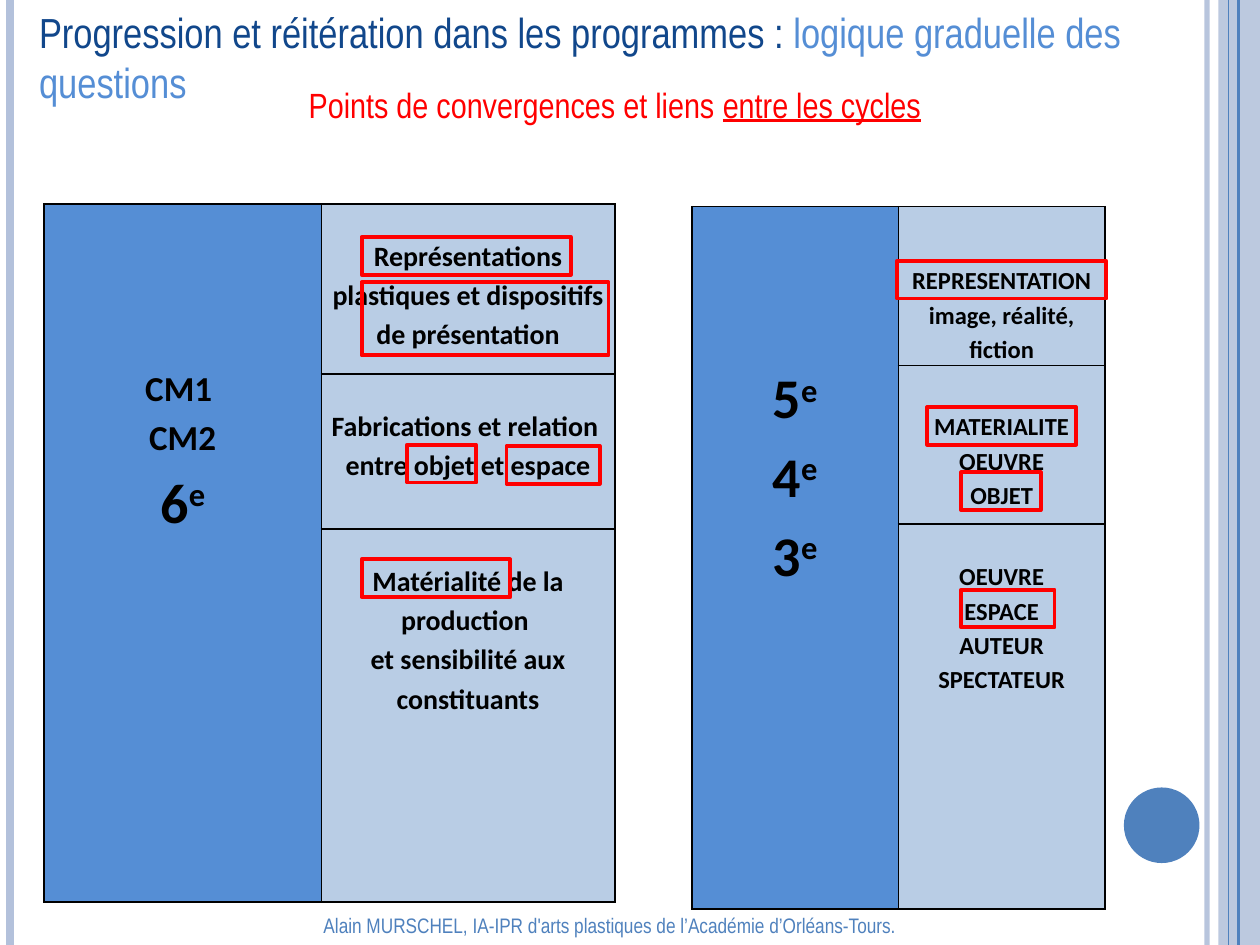
from lxml.etree import SubElement
from pptx import Presentation
from pptx.dml.color import RGBColor
from pptx.enum.shapes import MSO_CONNECTOR, MSO_SHAPE
from pptx.enum.text import MSO_ANCHOR, MSO_AUTO_SIZE, PP_ALIGN
from pptx.oxml.ns import qn
from pptx.util import Inches, Pt

HUES = {
    "navy": "11478B", "sky": "558ED5", "pale": "B9CDE5", "band": "B3C1DB",
    "blue": "4F81BD", "red": "FF0000", "black": "000000",
}
RAILS = [(9.58, "band", 3), (0.08, "band", 4.5), (9.83, "blue", 1.5), (9.75, "blue", 0.75)]
FRAMES = [
    (2.87, 1.88, 1.66, 0.3), (2.87, 2.24, 1.96, 0.58), (3.23, 3.53, 0.55, 0.3),
    (4.02, 3.54, 0.74, 0.3), (2.87, 4.44, 1.18, 0.3), (7.12, 2.07, 1.66, 0.3),
    (7.36, 3.23, 1.18, 0.3), (7.63, 3.75, 0.63, 0.3), (7.63, 4.68, 0.74, 0.3),
]
EARLY = {
    "box": (0.35, 1.62), "cols": (2.2, 2.33), "rows": (1.35, 1.23, 2.96), "size": 16,
    "years": (1.25, [("CM1 ", 20), ("CM2", 20), ("6e", 32)]),
    "themes": [
        (0.24, ["Représentations plastiques et dispositifs de présentation"]),
        (0.24, ["Fabrications et relation ", "entre objet et espace"]),
        (0.24, ["Matérialité de la production ", "et sensibilité aux constituants"]),
    ],
}
LATE = {
    "box": (5.49, 1.64), "cols": (1.64, 1.64), "rows": (1.26, 1.26, 2.93), "size": 14,
    "years": (1.18, [("5e", 32), ("4e", 32), ("3e", 32)]),
    "themes": [
        (0.44, ["REPRESENTATION", "image, réalité, fiction"]),
        (0.34, ["MATERIALITE", "OEUVRE", "OBJET"]),
        (0.27, ["OEUVRE", "ESPACE", "AUTEUR", "SPECTATEUR"]),
    ],
}


def tint(name):
    """Return the named colour."""
    return RGBColor.from_string(HUES[name])


def fade(fill, part):
    """Give a solid fill an opacity in percent."""
    hue = fill._xPr.find(".//" + qn("a:srgbClr"))
    SubElement(hue, qn("a:alpha"), val=str(part * 1000))


def add_rail(slide, left, hue, width):
    """Draw a full-height vertical line."""
    x = Inches(left)
    rail = slide.shapes.add_connector(MSO_CONNECTOR.STRAIGHT, x, 0, x, Inches(7.5))
    rail.line.color.rgb = tint(hue)
    rail.line.width = Pt(width)
    SubElement(rail._element.spPr, qn("a:effectLst"))
    return rail


def add_form(slide, kind, box, fill=None, line=None):
    """Draw a preset shape with a plain fill or a plain outline."""
    form = slide.shapes.add_shape(kind, *map(Inches, box))
    form.shadow.inherit = False
    if fill:
        form.fill.solid()
        form.fill.fore_color.rgb = tint(fill)
    else:
        form.fill.background()
    if line:
        form.line.color.rgb = tint(line)
        form.line.width = Pt(2.25)
    else:
        form.line.fill.background()
    return form


def set_text(shape, box, runs, size, align, anchor=MSO_ANCHOR.TOP):
    """Place a text shape and write one paragraph of coloured runs."""
    shape.left, shape.top, shape.width, shape.height = map(Inches, box)
    frame = shape.text_frame
    frame.word_wrap = True
    frame.auto_size = MSO_AUTO_SIZE.NONE
    frame.vertical_anchor = anchor
    para = frame.paragraphs[0]
    para.alignment = align
    for text, hue in runs:
        run = para.add_run()
        run.text = text
        run.font.name = "Arial Narrow"
        run.font.size = Pt(size)
        run.font.color.rgb = tint(hue)
    return para


def add_text(slide, *rest):
    """Add a text box and fill it."""
    return set_text(slide.shapes.add_textbox(0, 0, 0, 0), *rest)


def edge(cell):
    """Give a cell thin black borders."""
    props = cell._tc.get_or_add_tcPr()
    for side in ("a:lnL", "a:lnR", "a:lnT", "a:lnB"):
        line = SubElement(props, qn(side), w=str(Pt(1)))
        fill = SubElement(line, qn("a:solidFill"))
        SubElement(fill, qn("a:srgbClr"), val=HUES["black"])


def fill_cell(cell, hue, top, lines):
    """Write centred bold lines, raising the e of a school year."""
    cell.fill.solid()
    cell.fill.fore_color.rgb = tint(hue)
    cell.margin_left = cell.margin_right = Inches(0.02)
    cell.margin_top, cell.margin_bottom = Inches(top), 0
    frame = cell.text_frame
    for i, (text, size) in enumerate(lines):
        para = frame.add_paragraph() if i else frame.paragraphs[0]
        para.alignment = PP_ALIGN.CENTER
        para.line_spacing = 1.15
        year = text[0].isdigit()
        for part in text if year else [text]:
            run = para.add_run()
            run.text = part
            run.font.name = "Calibri"
            run.font.size = Pt(size)
            run.font.bold = True
            run.font.color.rgb = tint("black")
            if year and part == "e":
                run._r.get_or_add_rPr().set("baseline", "30000")


def add_cycle(slide, data):
    """Add the table of one cycle: its years beside its themes."""
    cols, rows = data["cols"], data["rows"]
    spot = (*data["box"], sum(cols), sum(rows))
    grid = slide.shapes.add_table(3, 2, *map(Inches, spot)).table
    grid.first_row = grid.horz_banding = False
    for col, width in zip(grid.columns, cols):
        col.width = Inches(width)
    for row, height in zip(grid.rows, rows):
        row.height = Inches(height)
    for cell in grid.iter_cells():
        edge(cell)
    grid.cell(0, 0).merge(grid.cell(2, 0))
    fill_cell(grid.cell(0, 0), "sky", *data["years"])
    for i, (top, lines) in enumerate(data["themes"]):
        fill_cell(grid.cell(i, 1), "pale", top, [(text, data["size"]) for text in lines])


def main():
    """Build the slide and save it."""
    deck = Presentation()
    deck.slide_width, deck.slide_height = Inches(10), Inches(7.5)
    slide = deck.slides.add_slide(deck.slide_layouts[5])
    first, *others = RAILS
    fade(add_rail(slide, *first).line.fill, 93)
    band = add_form(slide, MSO_SHAPE.RECTANGLE, (9.67, 0, 0.33, 7.5), fill="band")
    fade(band.fill, 87)
    for rail in others:
        add_rail(slide, *rail)
    add_form(slide, MSO_SHAPE.OVAL, (8.92, 6.25, 0.6, 0.6), fill="blue")
    set_text(slide.shapes.title, (0.21, 0, 9.25, 0.5), [
        ("Progression et réitération dans les programmes :", "navy"),
        (" logique graduelle des questions", "sky"),
    ], 24, PP_ALIGN.LEFT)
    lead = add_text(slide, (0.21, 0.61, 9.34, 0.44), [
        ("Points de convergences et liens ", "red"), ("entre les cycles", "red"),
    ], 20, PP_ALIGN.CENTER)
    lead.runs[1].font.underline = True
    add_text(slide, (0, 7.18, 9.68, 0.32), [
        ("Alain MURSCHEL, IA-IPR d'arts plastiques de l’Académie d’Orléans-Tours.", "blue"),
    ], 12, PP_ALIGN.CENTER, MSO_ANCHOR.MIDDLE)
    for cycle in (EARLY, LATE):
        add_cycle(slide, cycle)
    for box in FRAMES:
        add_form(slide, MSO_SHAPE.RECTANGLE, box, line="red")
    deck.save("out.pptx")


if __name__ == "__main__":
    main()
